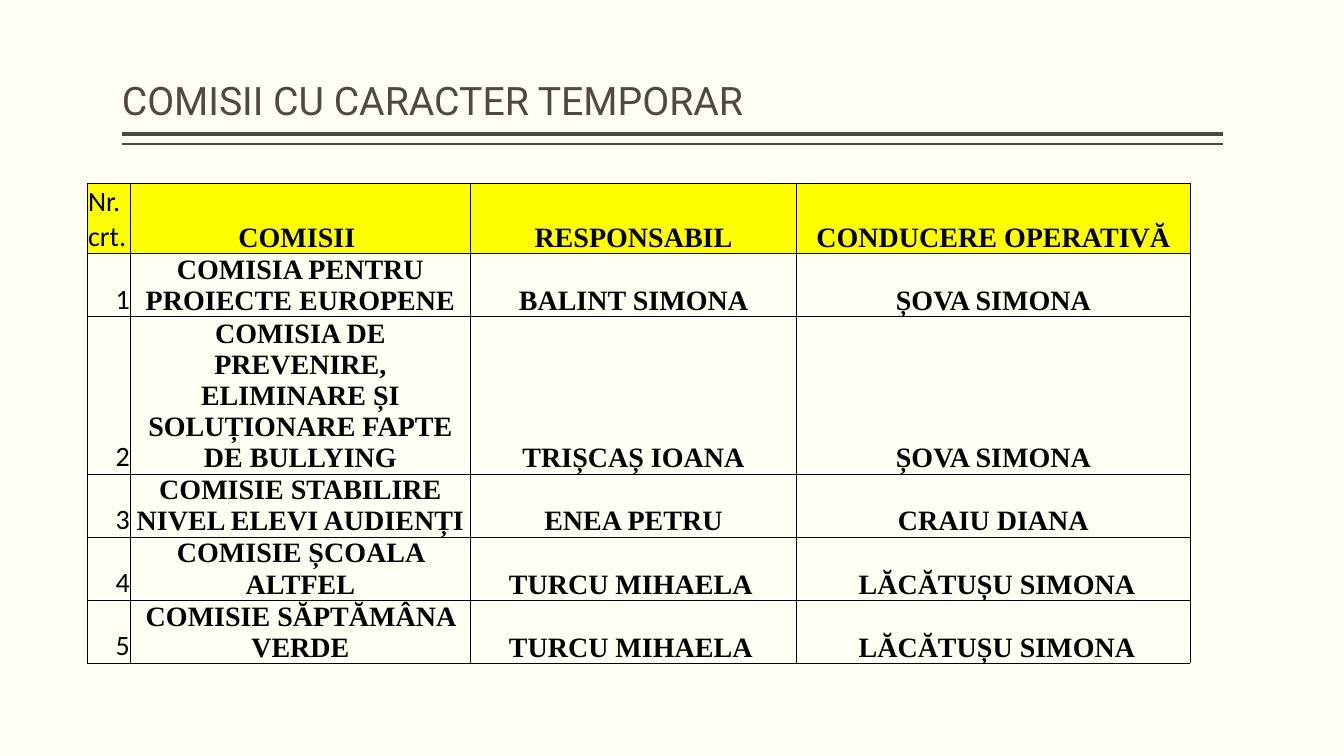
from dataclasses import dataclass

from lxml.etree import SubElement
from pptx import Presentation
from pptx.dml.color import RGBColor
from pptx.enum.text import MSO_ANCHOR, MSO_AUTO_SIZE, PP_ALIGN
from pptx.oxml.ns import qn
from pptx.util import Cm, Pt


@dataclass(frozen=True)
class Theme:
    """Colours, fonts and type sizes of the slide."""
    background: str = "FFFFF3"
    title: str = "514843"
    ink: str = "000000"
    header: str = "FFFF00"
    title_font: str = "Roboto"
    number_font: str = "Calibri"
    body_font: str = "Times New Roman"
    title_size: int = 28
    body_size: int = 20


COLUMN_WIDTHS = (1.09, 8.56, 8.23, 9.91)
ROW_HEIGHTS = (1.77, 1.59, 3.96, 1.59, 1.59, 1.59)
COMMISSIONS = (
    ("Nr.\ncrt.", "COMISII ", "RESPONSABIL", "CONDUCERE OPERATIVĂ"),
    ("1", "COMISIA PENTRU PROIECTE EUROPENE", "BALINT SIMONA", "ȘOVA SIMONA"),
    ("2", "COMISIA DE PREVENIRE, ELIMINARE ȘI SOLUȚIONARE FAPTE DE BULLYING",
     "TRIȘCAȘ IOANA", "ȘOVA SIMONA"),
    ("3", "COMISIE STABILIRE NIVEL ELEVI AUDIENȚI", "ENEA PETRU", "CRAIU DIANA"),
    ("4", "COMISIE ȘCOALA ALTFEL", "TURCU MIHAELA ", " LĂCĂTUȘU SIMONA"),
    ("5", "COMISIE SĂPTĂMÂNA VERDE", "TURCU MIHAELA ", " LĂCĂTUȘU SIMONA"),
)


def write_text(frame, text, font, size, color, bold=False,
               align=PP_ALIGN.LEFT, spacing=1.0):
    """Write one formatted paragraph into a text frame."""
    paragraph = frame.paragraphs[0]
    paragraph.text = text
    paragraph.alignment = align
    paragraph.line_spacing = spacing
    for run in paragraph.runs:
        run.font.name = font
        run.font.size = Pt(size)
        run.font.bold = bold
        run.font.color.rgb = RGBColor.from_string(color)


class SlideBuilder:
    """Draw themed elements on one slide."""

    def __init__(self, presentation, theme):
        """Add a title-only slide with the theme background."""
        self.theme = theme
        self.slide = presentation.slides.add_slide(presentation.slide_layouts[5])
        fill = self.slide.background.fill
        fill.solid()
        fill.fore_color.rgb = RGBColor.from_string(theme.background)

    def title(self, text, left, top, width, height):
        """Place and format the title placeholder."""
        shape = self.slide.shapes.title
        shape.left, shape.top = Cm(left), Cm(top)
        shape.width, shape.height = Cm(width), Cm(height)
        frame = shape.text_frame
        frame.auto_size = MSO_AUTO_SIZE.NONE
        frame.word_wrap = True
        frame.vertical_anchor = MSO_ANCHOR.BOTTOM
        frame.margin_left = frame.margin_right = 0
        frame.margin_top = frame.margin_bottom = Cm(0.13)
        write_text(frame, text, self.theme.title_font, self.theme.title_size,
                   self.theme.title, spacing=0.9)

    def rule(self, left, right, top, weight):
        """Draw a horizontal line."""
        connector = self.slide.shapes.add_connector(
            1, Cm(right), Cm(top), Cm(left), Cm(top))
        connector.line.width = Pt(weight)
        connector.line.color.rgb = RGBColor.from_string(self.theme.title)
        SubElement(connector._element.spPr, qn("a:effectLst"))

    def table(self, rows, left, top, widths, heights):
        """Add a bordered table with a coloured header row."""
        table = self.slide.shapes.add_table(
            len(rows), len(widths), Cm(left), Cm(top),
            Cm(sum(widths)), Cm(sum(heights))).table
        table.first_row = table.horz_banding = False
        for column, width in zip(table.columns, widths):
            column.width = Cm(width)
        for row, height in zip(table.rows, heights):
            row.height = Cm(height)
        for row_index, texts in enumerate(rows):
            for column_index, text in enumerate(texts):
                self.cell(table.cell(row_index, column_index), text,
                          row_index == 0, column_index == 0)

    def cell(self, cell, text, is_header, is_number):
        """Format one table cell."""
        theme = self.theme
        cell.vertical_anchor = MSO_ANCHOR.BOTTOM
        cell.margin_left = cell.margin_right = cell.margin_top = Cm(0.02)
        cell.margin_bottom = 0
        align = PP_ALIGN.CENTER
        if is_number:
            align = PP_ALIGN.LEFT if is_header else PP_ALIGN.RIGHT
        write_text(cell.text_frame, text,
                   theme.number_font if is_number else theme.body_font,
                   theme.body_size, theme.ink, bold=not is_number, align=align)
        self.borders(cell)
        if is_header:
            cell.fill.solid()
            cell.fill.fore_color.rgb = RGBColor.from_string(theme.header)
        else:
            cell.fill.background()

    def borders(self, cell):
        """Outline all four sides of a cell."""
        properties = cell._tc.get_or_add_tcPr()
        for side in ("a:lnL", "a:lnR", "a:lnT", "a:lnB"):
            line = SubElement(properties, qn(side), w=str(Pt(0.5)))
            fill = SubElement(line, qn("a:solidFill"))
            SubElement(fill, qn("a:srgbClr"), val=self.theme.ink)


def main():
    """Build and save the presentation."""
    presentation = Presentation()
    presentation.slide_width, presentation.slide_height = Cm(33.87), Cm(19.05)
    builder = SlideBuilder(presentation, Theme())
    for top, weight in ((3.38, 3), (3.63, 1)):
        builder.rule(3.07, 30.81, top, weight)
    builder.title("COMISII CU CARACTER TEMPORAR", 3.07, 0.2, 27.74, 3.05)
    builder.table(COMMISSIONS, 2.2, 4.62, COLUMN_WIDTHS, ROW_HEIGHTS)
    presentation.save("out.pptx")


if __name__ == "__main__":
    main()
